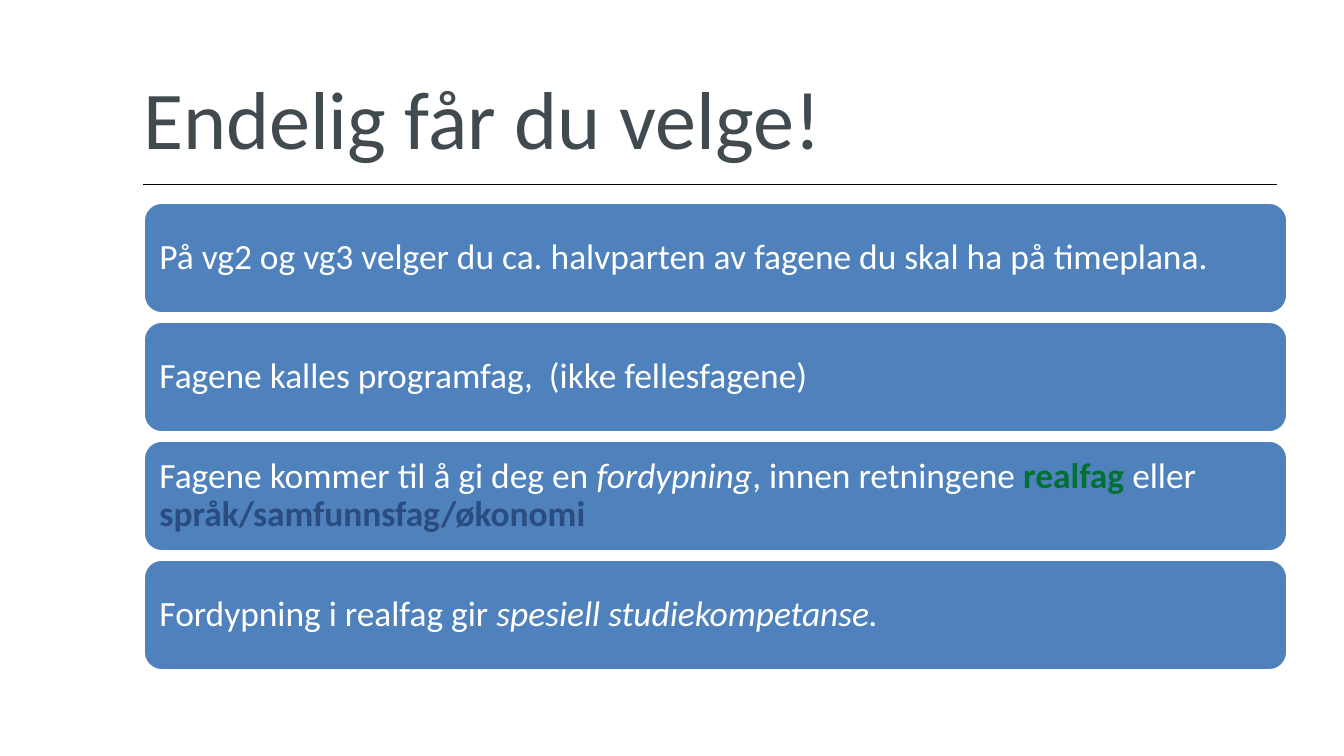
import pptx
import pptx.util
import pptx.dml.color
import pptx.enum.shapes
import pptx.enum.text
import pptx.oxml.ns
from lxml import etree

COLORS = {"title": "404A4F", "rule": "000000", "box": "4F81BD",
          "white": "FFFFFF", "green": "007033", "navy": "2A4C7F"}
FONT = "Calibri"
EMU_PER_PX = 914400 / 134.4
LEFT, WIDTH = 143, 1145
BOX_TOP, BOX_HEIGHT, BOX_PITCH = 202, 112, 119

POINTS = [
    [("På vg2 og vg3 velger du ca. halvparten av fagene du skal ha på timeplana.", {})],
    [("Fagene kalles programfag,  (ikke fellesfagene)", {})],
    [("Fagene kommer til å gi deg en ", {}),
     ("fordypning", {"italic": True}),
     (", innen retningene ", {}),
     ("realfag", {"color": "green", "bold": True}),
     (" eller ", {}),
     ("språk/samfunnsfag/økonomi", {"color": "navy", "bold": True})],
    [("Fordypning i realfag gir ", {}),
     ("spesiell studiekompetanse.", {"italic": True})],
]


def px(n):
    return pptx.util.Emu(round(n * EMU_PER_PX))


def rgb(name):
    return pptx.dml.color.RGBColor.from_string(COLORS[name])


class Deck:
    """Holds the style and the current slide, and draws each kind of element."""

    def __init__(self, width, height):
        self.prs = pptx.Presentation()
        self.prs.slide_width, self.prs.slide_height = px(width), px(height)
        self.slide = self.prs.slides.add_slide(self.prs.slide_layouts[6])

    def run(self, p, text, size, color="white", bold=False, italic=False):
        r = p.add_run()
        r.text = text
        r.font.name = FONT
        r.font.size = pptx.util.Pt(size)
        r.font.bold, r.font.italic = bold, italic
        r.font.color.rgb = rgb(color)

    def frame(self, sp, anchor, inset):
        tf = sp.text_frame
        tf.word_wrap = True
        tf.vertical_anchor = anchor
        tf.margin_left = tf.margin_right = tf.margin_top = tf.margin_bottom = px(inset)
        p = tf.paragraphs[0]
        p.alignment = pptx.enum.text.PP_ALIGN.LEFT
        return p

    def title(self, text, x, y, w, h):
        sp = self.slide.shapes.add_textbox(px(x), px(y), px(w), px(h))
        p = self.frame(sp, pptx.enum.text.MSO_ANCHOR.TOP, 0)
        self.run(p, text, 44, "title")

    def rule(self, x1, x2, y):
        line = self.slide.shapes.add_connector(
            pptx.enum.shapes.MSO_CONNECTOR.STRAIGHT, px(x1), px(y), px(x2), px(y))
        line.line.color.rgb = rgb("rule")
        line.line.width = pptx.util.Pt(0.25)
        etree.SubElement(line._element.spPr, pptx.oxml.ns.qn("a:effectLst"))

    def box(self, runs, x, y, w, h):
        sp = self.slide.shapes.add_shape(
            pptx.enum.shapes.MSO_SHAPE.ROUNDED_RECTANGLE, px(x), px(y), px(w), px(h))
        sp.shadow.inherit = False
        sp.fill.solid()
        sp.fill.fore_color.rgb = rgb("box")
        sp.line.color.rgb = rgb("white")
        sp.line.width = pptx.util.Pt(2)
        p = self.frame(sp, pptx.enum.text.MSO_ANCHOR.MIDDLE, 11)
        p.line_spacing = 0.9
        for text, style in runs:
            self.run(p, text, 19, **style)


def main():
    deck = Deck(1344, 756)
    deck.rule(LEFT, 1277, 184)
    deck.title("Endelig får du velge!", LEFT, 67, WIDTH, 126)
    for i, runs in enumerate(POINTS):
        deck.box(runs, LEFT, BOX_TOP + i * BOX_PITCH, WIDTH, BOX_HEIGHT)
    deck.prs.save("out.pptx")


if __name__ == "__main__":
    main()
